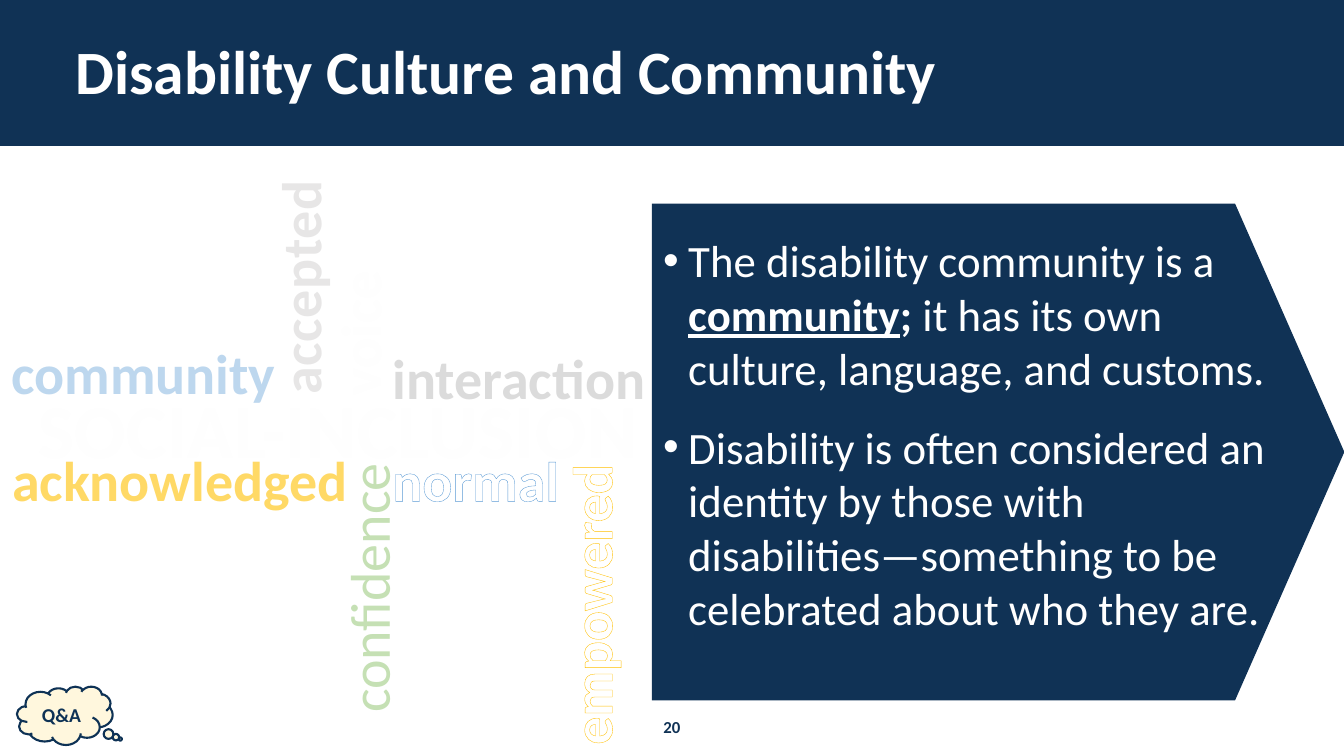
import pptx
import pptx.util
import pptx.dml.color
import pptx.enum.dml
import pptx.enum.shapes
import pptx.enum.text
import pptx.oxml
from dataclasses import dataclass

Cm, Pt = pptx.util.Cm, pptx.util.Pt
SHAPE = pptx.enum.shapes.MSO_SHAPE
PATTERN = pptx.enum.dml.MSO_PATTERN
ALIGN = pptx.enum.text.PP_ALIGN
ANCHOR = pptx.enum.text.MSO_ANCHOR
NS = 'xmlns:a="http://schemas.openxmlformats.org/drawingml/2006/main"'

TITLE = "Disability Culture and Community"
NUMBER = "20"
CALLOUT = "Q&A"
BULLETS = [
    (18, [("The disability community is a ", False, False),
          ("community", True, True),
          ("; ", True, False),
          ("it has its own culture, language, and customs.", False, False)]),
    (6, [("Disability is often considered an identity by those with "
          "disabilities—something to be celebrated about who they are.", False, False)]),
]
WORDS = [
    dict(text="SOCIAL-INCLUSION", at=(0.64, 9.53, 15.77), size=54, color="FEFEFE",
         spacing=50, outline=("4472C4", 0.75), shadow="4472C4"),
    dict(text="normal", at=(9.6, 11.1, 4.78), outline=("5B9BD5", 1),
         pattern=(PATTERN.LIGHT_DOWNWARD_DIAGONAL, "9DC3E6", "FFFFFF")),
    dict(text="acknowledged", at=(0, 11.1, 9.07), color="FFD966", outline=("5B9BD5", 1)),
    dict(text="empowered", at=(11.05, 14.25, 7.65), turn=270, color="FFFFFF",
         outline=("FFC000", 0.52), shadow="5B9BD5"),
    dict(text="accepted", at=(4.55, 6.27, 5.99), turn=270, color="E7E6E6", spacing=50),
    dict(text="interaction", at=(9.6, 8.53, 6.96), outline=("525252", 1),
         pattern=(PATTERN.NARROW_HORIZONTAL, "A5A5A5", "DBDBDB")),
    dict(text="confidence", at=(5.84, 13.84, 6.86), turn=270, color="C5E0B4", bold=False),
    dict(text="community", at=(0, 8.41, 7.24), color="BDD7EE"),
    dict(text="voice", at=(7.21, 7.42, 3.68), turn=270, color="FEFEFE", spacing=50,
         outline=("A9D18E", 0.75), shadow="4472C4"),
]


@dataclass(frozen=True)
class Theme:
    font: str = "Calibri"
    navy: str = "103255"
    ink: str = "0E3255"
    cream: str = "FFF7DD"
    white: str = "FFFFFF"
    title: int = 44
    body: int = 32
    word: int = 40
    callout: int = 14
    number: int = 12


theme = Theme()


def rgb(color):
    return pptx.dml.color.RGBColor.from_string(color)


def box(left, top, width, height):
    return Cm(left), Cm(top), Cm(width), Cm(height)


def style(r, size, color=None, bold=False, underline=False):
    f = r.font
    f.name, f.size, f.bold = theme.font, Pt(size), bold
    if underline:
        f.underline = True
    if color:
        f.color.rgb = rgb(color)


def add_shape(s, kind, at, fill, line=None):
    sp = s.shapes.add_shape(kind, *box(*at))
    sp.shadow.inherit = False
    sp.fill.solid()
    sp.fill.fore_color.rgb = rgb(fill)
    if line:
        sp.line.color.rgb = rgb(line)
        sp.line.width = Pt(1.5)
    else:
        sp.line.fill.background()
    return sp


def add_label(s, at, text, size, color, bold=True):
    sp = s.shapes.add_textbox(*box(*at))
    p = sp.text_frame.paragraphs[0]
    p.text = text
    p.alignment = ALIGN.CENTER
    style(p.runs[0], size, color, bold)
    return sp


def add_word(s, text, at, size=theme.word, color=None, pattern=None, bold=True,
             turn=0, spacing=0, outline=None, shadow=None):
    height = 2.57 if size > theme.word else 1.96
    sp = add_label(s, (*at, height), text, size, color, bold)
    sp.rotation = turn
    sp.text_frame.word_wrap = False
    r = sp.text_frame.paragraphs[0].runs[0]
    if pattern:
        fill = r.font.fill
        fill.patterned()
        fill.pattern = pattern[0]
        fill.fore_color.rgb = rgb(pattern[1])
        fill.back_color.rgb = rgb(pattern[2])
    rPr = r._r.get_or_add_rPr()
    if spacing:
        rPr.set("spc", str(spacing))
    if outline:
        rPr.insert(0, pptx.oxml.parse_xml(
            f'<a:ln {NS} w="{Pt(outline[1])}"><a:solidFill>'
            f'<a:srgbClr val="{outline[0]}"/></a:solidFill></a:ln>'))
    if shadow:
        fill = rPr.find(pptx.oxml.ns.qn("a:solidFill"))
        fill.addnext(pptx.oxml.parse_xml(
            f'<a:effectLst {NS}><a:outerShdw dist="38100" dir="2700000" algn="tl" '
            f'rotWithShape="0"><a:srgbClr val="{shadow}"/></a:outerShdw></a:effectLst>'))


def add_bullets(s, at):
    tf = s.shapes.add_textbox(*box(*at)).text_frame
    tf.word_wrap = True
    for i, (after, parts) in enumerate(BULLETS):
        p = tf.add_paragraph() if i else tf.paragraphs[0]
        p.space_after = Pt(after)
        pPr = p._p.get_or_add_pPr()
        pPr.set("marL", str(Cm(0.635)))
        pPr.set("indent", str(-Cm(0.635)))
        pPr.append(pptx.oxml.parse_xml(f'<a:buFont {NS} typeface="Arial"/>'))
        pPr.append(pptx.oxml.parse_xml(f'<a:buChar {NS} char="•"/>'))
        for text, bold, underline in parts:
            r = p.add_run()
            r.text = text
            style(r, theme.body, theme.white, bold, underline)


def main():
    prs = pptx.Presentation()
    prs.slide_width, prs.slide_height = Cm(33.87), Cm(19.05)
    s = prs.slides.add_slide(prs.slide_layouts[5])

    band = add_shape(s, SHAPE.RECTANGLE, (0, 0, 33.87, 3.68), theme.navy)
    title = s.shapes.title
    band._element.addnext(title._element)
    title.left, title.top, title.width, title.height = box(1.65, 1.02, 30.58, 1.7)
    tf = title.text_frame
    tf.text = TITLE
    tf.vertical_anchor = ANCHOR.MIDDLE
    p = tf.paragraphs[0]
    p.alignment, p.line_spacing = ALIGN.LEFT, 0.9
    style(p.runs[0], theme.title, theme.white, True)

    add_label(s, (15.47, 17.93, 2.92, 0.76), NUMBER, theme.number, theme.navy)
    for word in WORDS:
        add_word(s, **word)

    plate = add_shape(s, SHAPE.PENTAGON, (16.43, 5.13, 17.45, 12.52), theme.navy)
    plate.adjustments[0] = 0.22
    cloud = add_shape(s, SHAPE.CLOUD_CALLOUT, (0.43, 17.3, 2.41, 1.47), theme.cream, theme.ink)
    cloud.adjustments[0], cloud.adjustments[1] = 0.58, 0.4
    tf = cloud.text_frame
    tf.text = CALLOUT
    tf.vertical_anchor = ANCHOR.MIDDLE
    p = tf.paragraphs[0]
    p.alignment, p.line_spacing, p.space_after = ALIGN.CENTER, 1.07, Pt(8)
    style(p.runs[0], theme.callout, theme.ink, True)
    add_bullets(s, (16.46, 5.74, 15.93, 12.34))

    prs.save("out.pptx")


if __name__ == "__main__":
    main()
